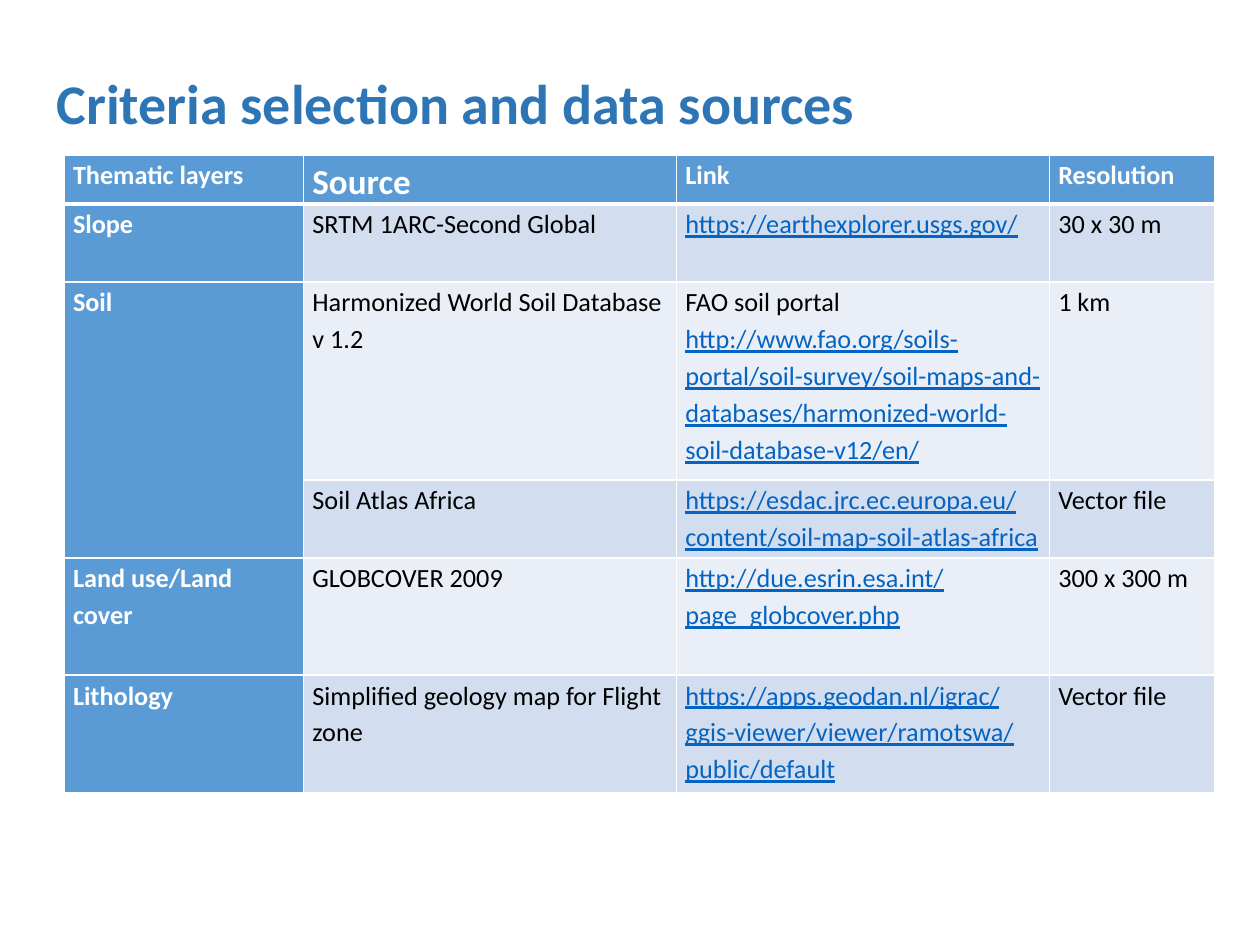
from lxml.etree import SubElement
from pptx import Presentation
from pptx.dml.color import RGBColor
from pptx.enum.text import MSO_ANCHOR
from pptx.oxml.ns import qn
from pptx.util import Inches, Pt

FONT = "Calibri"
TITLE_BLUE = RGBColor(0x2E, 0x75, 0xB6)
HEADER_BLUE = RGBColor(0x5B, 0x9B, 0xD5)
BAND_DARK = RGBColor(0xD2, 0xDE, 0xEF)
BAND_LIGHT = RGBColor(0xEA, 0xEF, 0xF7)
LINK_BLUE = RGBColor(0x05, 0x63, 0xC1)
WHITE = RGBColor(0xFF, 0xFF, 0xFF)
BLACK = RGBColor(0, 0, 0)

COLUMN_WIDTHS = [1.9, 2.96, 2.96, 1.31]
ROW_HEIGHTS = [0.39, 0.62, 1.57, 0.62, 0.93, 0.93]
ROWS = [
    ["Thematic layers", "Source", "Link", "Resolution"],
    ["Slope", "SRTM 1ARC-Second Global", "https://earthexplorer.usgs.gov/", "30 x 30 m"],
    ["Soil", "Harmonized World Soil Database v 1.2",
     "FAO soil portal\nhttp://www.fao.org/soils-portal/soil-survey/soil-maps-and-databases/"
     "harmonized-world-soil-database-v12/en/", "1 km"],
    ["", "Soil Atlas Africa",
     "https://esdac.jrc.ec.europa.eu/content/soil-map-soil-atlas-africa", "Vector file"],
    ["Land use/Land cover", "GLOBCOVER 2009",
     "http://due.esrin.esa.int/page_globcover.php", "300 x 300 m"],
    ["Lithology", "Simplified geology map for Flight zone",
     "https://apps.geodan.nl/igrac/ggis-viewer/viewer/ramotswa/public/default", "Vector file"],
]


def add_span(para, text, size, color, bold=False, underline=False):
    """Add one formatted run to a paragraph."""
    span = para.add_run()
    span.text = text
    span.font.name = FONT
    span.font.size = Pt(size)
    span.font.color.rgb = color
    span.font.bold = bold
    span.font.underline = underline


def add_title(page, left, top, width, height):
    """Place the slide title in the given box."""
    box = page.shapes.add_textbox(left, top, width, height)
    frame = box.text_frame
    frame.word_wrap = True
    frame.vertical_anchor = MSO_ANCHOR.TOP
    frame.margin_top = Inches(0.24)
    para = frame.paragraphs[0]
    para.line_spacing = 0.9
    add_span(para, "Criteria selection and data sources", 32, TITLE_BLUE, bold=True)


def set_borders(cell, bottom_width):
    """Draw white borders around a cell."""
    properties = cell._tc.get_or_add_tcPr()
    for side in ("lnL", "lnR", "lnT", "lnB"):
        width = bottom_width if side == "lnB" else 1
        line = SubElement(properties, qn(f"a:{side}"), w=str(Pt(width)))
        fill = SubElement(line, qn("a:solidFill"))
        SubElement(fill, qn("a:srgbClr"), val=str(WHITE))


def style_cell(cell, row, column):
    """Set the borders, fill and margins that a cell's place calls for."""
    set_borders(cell, 3 if row == 0 else 1)
    band = BAND_DARK if row % 2 else BAND_LIGHT
    cell.fill.solid()
    cell.fill.fore_color.rgb = HEADER_BLUE if row == 0 or column == 0 else band
    cell.margin_left = cell.margin_right = Inches(0.07)
    cell.margin_top = cell.margin_bottom = 0


def fill_cell(cell, text, row, column):
    """Write the lines of a cell, showing web addresses as links."""
    heading = row == 0 or column == 0
    size = 20 if text == "Source" else 15
    frame = cell.text_frame
    for index, line in enumerate(text.split("\n")):
        para = frame.add_paragraph() if index else frame.paragraphs[0]
        para.line_spacing = 1.15
        link = line.startswith("http")
        color = WHITE if heading else LINK_BLUE if link else BLACK
        add_span(para, line, size, color, bold=heading, underline=link)


def add_sources_table(page, left, top, width, height):
    """Place the table of thematic layers and their sources in the given box."""
    shape = page.shapes.add_table(len(ROWS), len(COLUMN_WIDTHS), left, top, width, height)
    table = shape.table
    for column, size in zip(table.columns, COLUMN_WIDTHS):
        column.width = Inches(size)
    for row, size in zip(table.rows, ROW_HEIGHTS):
        row.height = Inches(size)
    for row, texts in enumerate(ROWS):
        for column, text in enumerate(texts):
            cell = table.cell(row, column)
            style_cell(cell, row, column)
            if text:
                fill_cell(cell, text, row, column)
    table.cell(2, 0).merge(table.cell(3, 0))


def main():
    """Build the deck and save it."""
    deck = Presentation()
    deck.slide_width = Inches(10)
    deck.slide_height = Inches(7.5)
    page = deck.slides.add_slide(deck.slide_layouts[6])
    add_title(page, Inches(0.35), Inches(0.36), Inches(8.62), Inches(1.45))
    add_sources_table(page, Inches(0.51), Inches(1.23),
                      Inches(sum(COLUMN_WIDTHS)), Inches(sum(ROW_HEIGHTS)))
    deck.save("out.pptx")


if __name__ == "__main__":
    main()
